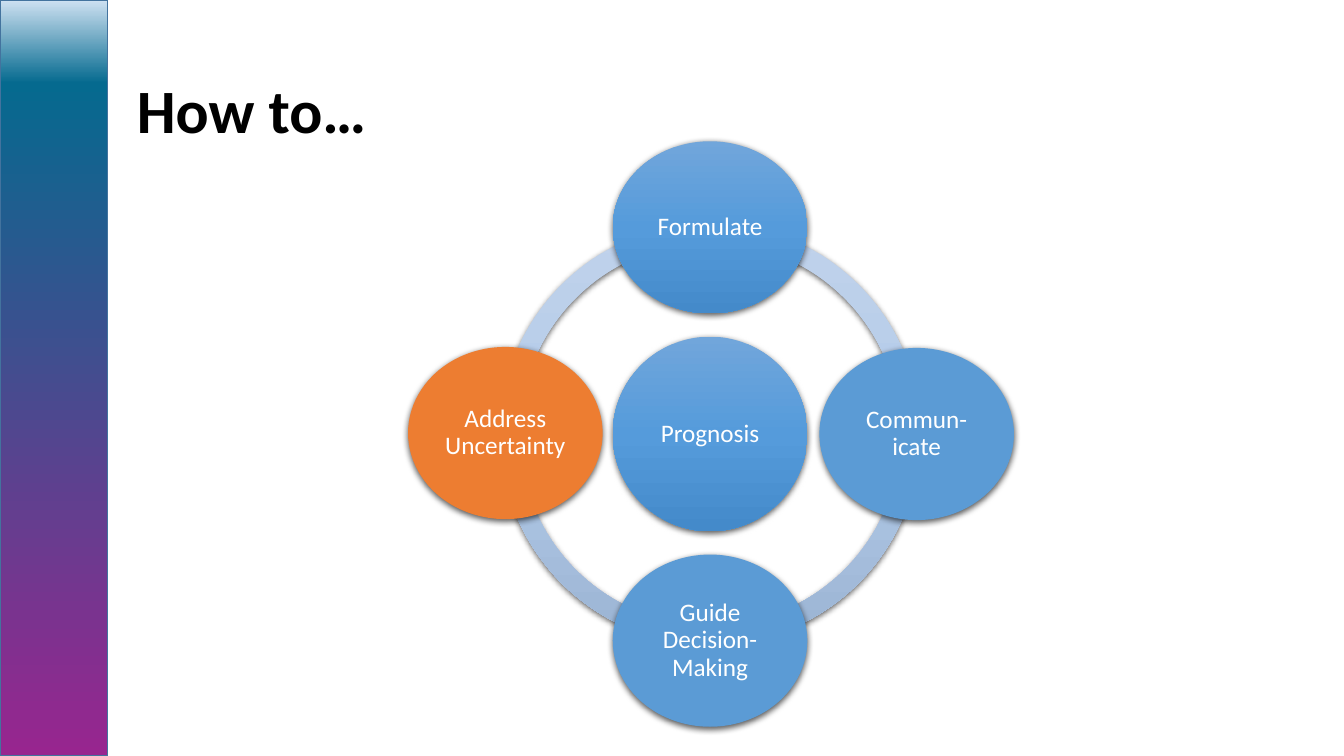
from copy import deepcopy
from dataclasses import dataclass

from lxml import etree
from pptx import Presentation
from pptx.dml.color import RGBColor
from pptx.enum.shapes import MSO_SHAPE
from pptx.enum.text import MSO_ANCHOR, PP_ALIGN
from pptx.util import Pt

RECT = MSO_SHAPE.RECTANGLE
ARC = MSO_SHAPE.BLOCK_ARC
OVAL = MSO_SHAPE.OVAL
LEFT = PP_ALIGN.LEFT
CENTER = PP_ALIGN.CENTER
MIDDLE = MSO_ANCHOR.MIDDLE

NS = "http://schemas.openxmlformats.org/drawingml/2006/main"
SHADOW = (
    f'<a:outerShdw xmlns:a="{NS}" blurRad="57150" dist="19050" dir="5400000" '
    'algn="ctr" rotWithShape="0"><a:srgbClr val="000000">'
    '<a:alpha val="63000"/></a:srgbClr></a:outerShdw>'
)

BAR = ((0, "98258F"), (0.89, "056A8F"), (1, "CEE1F2"))
RING = ((0, "C0D2EB"), (0.5, "B3CBE9"), (1, "9BB4D3"))
BLUE = ((0, "71A6DB"), (0.5, "559BDB"), (1, "448ACA"))
FLAT = "5B9BD5"
ORANGE = "ED7D31"

MID_X, MID_Y = 507.2, 310
STEP = 147.6
RING_D = 301.7
DISC_W, DISC_H = 139, 123
QUARTER = 54


@dataclass
class Disc:
    text: str
    fill: str | tuple
    x: float = MID_X
    y: float = MID_Y
    high: float = DISC_H


@dataclass
class Arc:
    turn: int
    shift: float


DISCS = [
    Disc("Prognosis", BLUE, high=DISC_W),
    Disc("Formulate", BLUE, y=MID_Y - STEP),
    Disc("Commun-icate", FLAT, x=MID_X + STEP),
    Disc("Guide Decision-Making", FLAT, y=MID_Y + STEP),
    Disc("Address Uncertainty", ORANGE, x=MID_X - 146.2, y=MID_Y - 0.7),
]
ARCS = [Arc(2, 0.7), Arc(1, 0.7), Arc(0, -0.7), Arc(3, -0.7)]


def color(code: str) -> RGBColor:
    return RGBColor.from_string(code)


def paint(shape, fill: str | tuple, angle: float = 270) -> None:
    if isinstance(fill, str):
        shape.fill.solid()
        shape.fill.fore_color.rgb = color(fill)
        return
    shape.fill.gradient()
    shape.fill.gradient_angle = angle
    stops = shape.fill._fill._gradFill.gsLst
    stops.append(deepcopy(stops[-1]))
    for stop, (place, code) in zip(shape.fill.gradient_stops, fill):
        stop.position = place
        stop.color.rgb = color(code)


def add(slide, kind, x: float, y: float, wide: float, high: float,
        fill: str | tuple, angle: float = 270, edge: str = ""):
    shape = slide.shapes.add_shape(kind, Pt(x), Pt(y), Pt(wide), Pt(high))
    paint(shape, fill, angle)
    shape.shadow.inherit = False
    if edge:
        shape.line.color.rgb = color(edge)
        shape.line.width = Pt(1)
    else:
        shape.line.fill.background()
        glow = shape._element.spPr.find(f"{{{NS}}}effectLst")
        glow.append(etree.fromstring(SHADOW))
    return shape


def write(shape, text: str, size: float = 18, ink: str = "FFFFFF",
          bold: bool = False, align=CENTER, inset: tuple = (2, 2)) -> None:
    frame = shape.text_frame
    frame.word_wrap = True
    frame.vertical_anchor = MIDDLE
    frame.margin_left = frame.margin_right = Pt(inset[0])
    frame.margin_top = frame.margin_bottom = Pt(inset[1])
    para = frame.paragraphs[0]
    para.alignment = align
    para.line_spacing = 0.9
    run = para.add_run()
    run.text = text
    run.font.name = "Calibri"
    run.font.size = Pt(size)
    run.font.bold = bold
    run.font.color.rgb = color(ink)


def draw_arc(slide, arc: Arc) -> None:
    half = RING_D / 2
    shape = add(slide, ARC, MID_X + arc.shift - half, MID_Y - half,
                RING_D, RING_D, RING)
    shape.adjustments[0] = arc.turn * QUARTER
    shape.adjustments[1] = (arc.turn + 1) % 4 * QUARTER
    shape.adjustments[2] = 0.046


def draw_disc(slide, disc: Disc) -> None:
    shape = add(slide, OVAL, disc.x - DISC_W / 2, disc.y - disc.high / 2,
                DISC_W, disc.high, disc.fill)
    write(shape, disc.text)


def main() -> None:
    deck = Presentation()
    deck.slide_width, deck.slide_height = Pt(960), Pt(540)
    slide = deck.slides.add_slide(deck.slide_layouts[6])
    add(slide, RECT, 0, 0, 77, 540, BAR, angle=90, edge="43739E")
    title = slide.shapes.add_textbox(Pt(90.7), Pt(28.8), Pt(838), Pt(104.4))
    write(title, "How to…", size=44, ink="000000", bold=True,
          align=LEFT, inset=(7.2, 3.6))
    for arc in ARCS:
        draw_arc(slide, arc)
    for disc in DISCS:
        draw_disc(slide, disc)
    deck.save("out.pptx")


if __name__ == "__main__":
    main()
